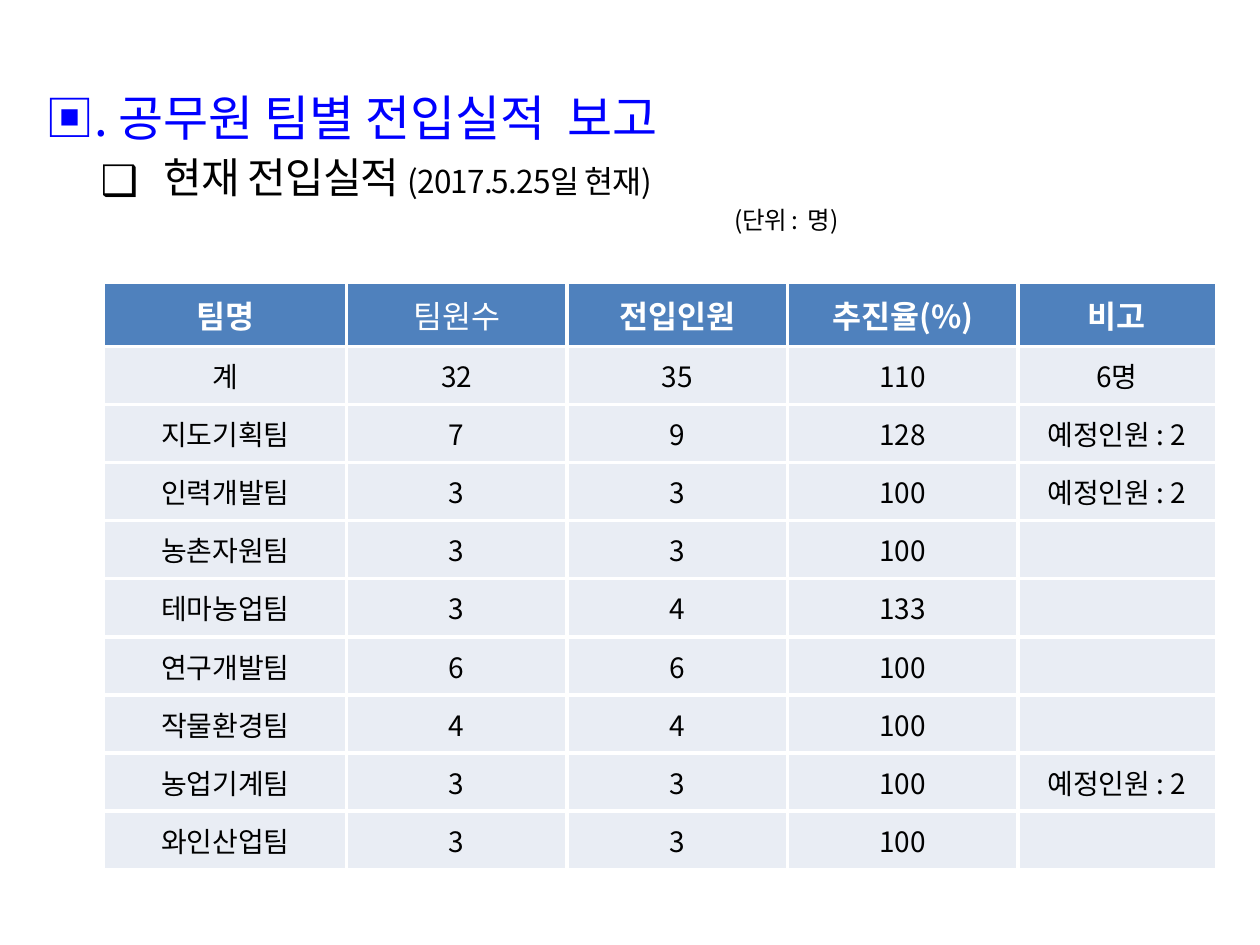
import pptx
import pptx.util
import pptx.dml.color
import pptx.enum.text
import pptx.oxml.ns
from lxml import etree

RGBColor = pptx.dml.color.RGBColor
BLUE = RGBColor(0x00, 0x00, 0xFF)
BLACK = RGBColor(0x00, 0x00, 0x00)
WHITE = RGBColor(0xFF, 0xFF, 0xFF)
HEAD = RGBColor(0x4F, 0x81, 0xBD)
BODY = RGBColor(0xE9, 0xED, 0xF4)
FONT = "Noto Sans CJK KR"
WIDE, HIGH = pptx.util.Inches(10), pptx.util.Inches(7.5)
COLS = [1.92, 1.75, 1.75, 1.83, 1.57]
ROWS = [0.5] + [0.46] * 9
PLAN = "예정인원 : 2"
DATA = [
    ["팀명", "팀원수", "전입인원", "추진율(%)", "비고"],
    ["계", "32", "35", "110", "6명"],
    ["지도기획팀", "7", "9", "128", PLAN],
    ["인력개발팀", "3", "3", "100", PLAN],
    ["농촌자원팀", "3", "3", "100", ""],
    ["테마농업팀", "3", "4", "133", ""],
    ["연구개발팀", "6", "6", "100", ""],
    ["작물환경팀", "4", "4", "100", ""],
    ["농업기계팀", "3", "3", "100", PLAN],
    ["와인산업팀", "3", "3", "100", ""],
]


def add(root, tag, **keys):
    """Append a drawing element with attributes and return it."""
    return etree.SubElement(root, pptx.oxml.ns.qn("a:" + tag), **keys)


def share(left, top, width, height):
    """Turn shares of the slide into a box of lengths."""
    return [int(part * full) for part, full
            in zip((left, top, width, height), (WIDE, HIGH) * 2)]


def write(para, text, size=16, color=BLACK, bold=False, track=None):
    """Add a formatted run of text to a paragraph."""
    run = para.add_run()
    run.text = text
    font = run.font
    font.size, font.bold, font.name = pptx.util.Pt(size), bold, FONT
    font.color.rgb = color
    props = run._r.get_or_add_rPr()
    add(props, "ea", typeface=FONT)
    if track is not None:
        props.set("spc", str(track))


def indent(para, left, hang=0, mark=None):
    """Set the indent, line spacing and bullet of a paragraph."""
    para.line_spacing = 1.1
    props = para._p.get_or_add_pPr()
    props.set("marL", str(int(left * WIDE)))
    props.set("indent", str(int(-hang * WIDE)))
    if mark:
        tint = add(props, "buClr")
        add(tint, "srgbClr", val=str(BLACK))
        add(props, "buFont", typeface=FONT)
        add(props, "buChar", char=mark)
    else:
        add(props, "buNone")


def heading(slide, box):
    """Place the title, the subtitle and the unit note in the box."""
    frame = slide.shapes.add_textbox(*box).text_frame
    frame.word_wrap = True
    title = frame.paragraphs[0]
    indent(title, 0.056, 0.05)
    write(title, "▣. 공무원 팀별 전입실적  보고", size=28, color=BLUE)
    sub = frame.add_paragraph()
    indent(sub, 0.1, 0.05, "❑")
    write(sub, "현재 전입실적 ", size=24, track=-50)
    write(sub, "(2017.5.25일 현재)", size=18, track=-50)
    unit = frame.add_paragraph()
    indent(unit, 0.553)
    write(unit, "(단위 :  명)", size=14, track=-50)


def edge(cell, outer):
    """Draw white cell borders, thin on the outer sides."""
    props = cell._tc.get_or_add_tcPr()
    for side in "LRTB":
        width = pptx.util.Pt(1 if side in outer else 2.25)
        line = add(props, "ln" + side, w=str(int(width)))
        add(add(line, "solidFill"), "srgbClr", val=str(WHITE))


def grid(slide, box):
    """Place the team table in the box."""
    left, top, width, height = box
    table = slide.shapes.add_table(len(ROWS), len(COLS), *box).table
    table.horz_banding = False
    for col, part in zip(table.columns, COLS):
        col.width = int(width * part / sum(COLS))
    for row, part in zip(table.rows, ROWS):
        row.height = int(height * part / sum(ROWS))
    for y, row in enumerate(DATA):
        for x, text in enumerate(row):
            cell = table.cell(y, x)
            ends = {"L": x == 0, "R": x == len(COLS) - 1,
                    "T": y == 0, "B": y == len(ROWS) - 1}
            edge(cell, [side for side, hit in ends.items() if hit])
            cell.fill.solid()
            cell.fill.fore_color.rgb = BODY if y else HEAD
            cell.vertical_anchor = pptx.enum.text.MSO_ANCHOR.MIDDLE
            para = cell.text_frame.paragraphs[0]
            para.alignment = pptx.enum.text.PP_ALIGN.CENTER
            if y == 0:
                write(para, text, size=18, color=WHITE, bold=x != 1)
            elif text:
                write(para, text)


def main():
    """Build the slide and save it."""
    deck = pptx.Presentation()
    deck.slide_width, deck.slide_height = WIDE, HIGH
    slide = deck.slides.add_slide(deck.slide_layouts[6])
    heading(slide, share(0.02, 0.08, 0.98, 0.85))
    grid(slide, share(0.083, 0.3, 0.882, 0.62))
    deck.save("out.pptx")


if __name__ == "__main__":
    main()
